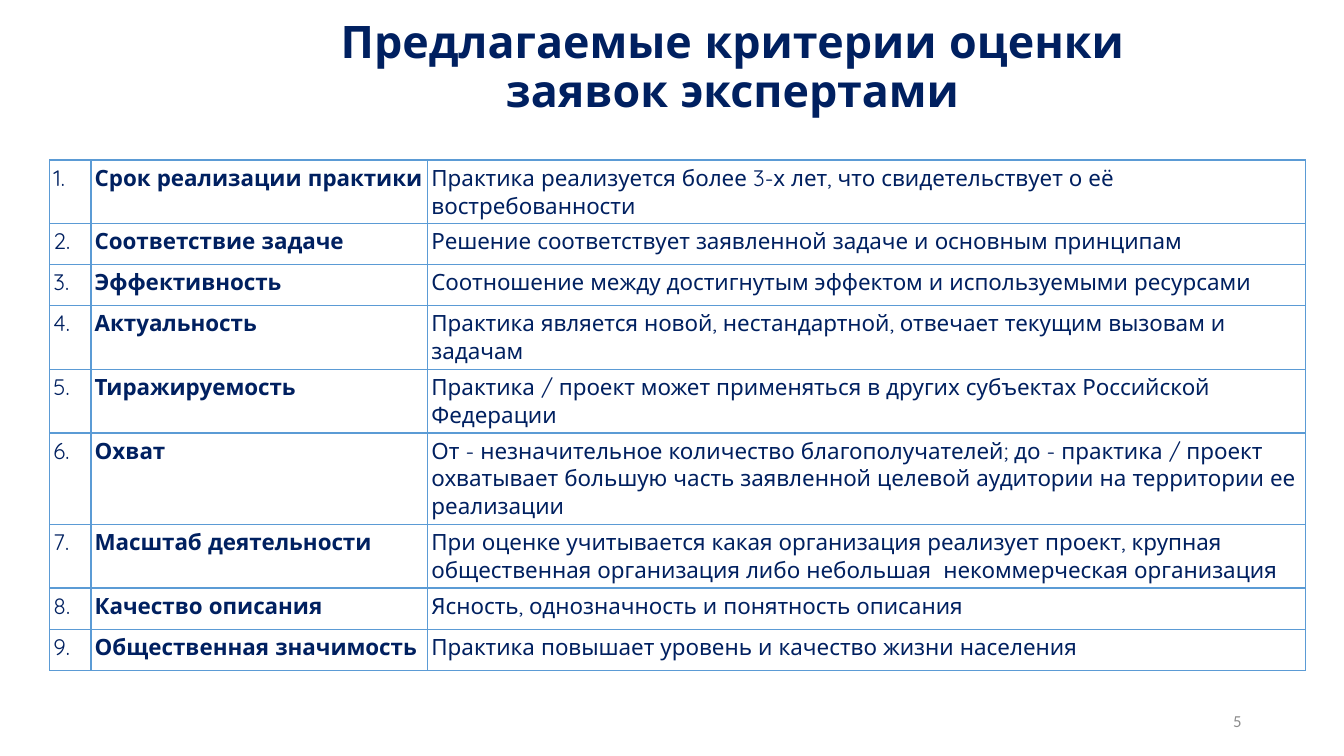
from dataclasses import dataclass
from typing import Any, NamedTuple

from lxml import etree
from pptx import Presentation
from pptx.dml.color import RGBColor
from pptx.enum.text import MSO_ANCHOR, PP_ALIGN
from pptx.oxml.ns import qn
from pptx.util import Pt

LEFT, CENTER, RIGHT = PP_ALIGN.LEFT, PP_ALIGN.CENTER, PP_ALIGN.RIGHT
MIDDLE, BOTTOM = MSO_ANCHOR.MIDDLE, MSO_ANCHOR.BOTTOM


@dataclass(frozen=True)
class Theme:
    navy: str = "002060"
    gray: str = "8C8C8C"
    blue: str = "5B9BD5"
    main: str = "Quicksand"
    plain: str = "Calibri"
    title: float = 32
    body: float = 16
    small: float = 12


class Style(NamedTuple):
    face: str
    size: float
    color: str
    bold: bool = False
    align: Any = LEFT
    spacing: float = 1.0


class Label(NamedTuple):
    text: str
    box: tuple[float, float, float, float]
    anchor: Any
    style: Style


class Rule(NamedTuple):
    name: str
    detail: str
    lines: int = 1


THEME = Theme()
BODY = Style(THEME.main, THEME.body, THEME.navy)
STRONG = BODY._replace(bold=True)
LABELS = [
    Label("Предлагаемые критерии оценки заявок экспертами", (196, 13, 654.5, 74), BOTTOM,
          Style(THEME.main, THEME.title, THEME.navy, True, CENTER, 0.9)),
    Label("5", (678, 500.5, 216, 28.8), MIDDLE,
          Style(THEME.plain, THEME.small, THEME.gray, align=RIGHT)),
]
RULES = [
    Rule("Срок реализации практики",
         "Практика реализуется более 3-х лет, что свидетельствует о её востребованности", 2),
    Rule("Соответствие задаче", "Решение соответствует заявленной задаче и основным принципам"),
    Rule("Эффективность", "Соотношение между достигнутым эффектом и используемыми ресурсами"),
    Rule("Актуальность",
         "Практика является новой, нестандартной, отвечает текущим вызовам и задачам", 2),
    Rule("Тиражируемость",
         "Практика / проект может применяться в других субъектах Российской Федерации", 2),
    Rule("Охват",
         "От - незначительное количество благополучателей; до - практика / проект охватывает "
         "большую часть заявленной целевой аудитории на территории ее реализации", 3),
    Rule("Масштаб деятельности",
         "При оценке учитывается какая организация реализует проект, крупная общественная "
         "организация либо небольшая  некоммерческая организация", 2),
    Rule("Качество описания", "Ясность, однозначность и понятность описания"),
    Rule("Общественная значимость", "Практика повышает уровень и качество жизни населения"),
]
WIDTHS = [29.5, 240.5, 627]
LEAST, LINE, PAD = 29.4, 20, 5.4
INSET = Pt(2.7)
CELL = {"margin_left": INSET, "margin_right": INSET, "margin_top": INSET, "margin_bottom": INSET}


def apply(target: Any, values: dict[str, Any]) -> None:
    for name, value in values.items():
        setattr(target, name, value)


def write(frame: Any, text: str, style: Style) -> None:
    para = frame.paragraphs[0]
    apply(para, {"alignment": style.align, "line_spacing": style.spacing})
    run = para.add_run()
    run.text = text
    apply(run.font, {"name": style.face, "size": Pt(style.size), "bold": style.bold})
    run.font.color.rgb = RGBColor.from_string(style.color)


def border(cell: Any) -> None:
    props = cell._tc.get_or_add_tcPr()
    for side in ("L", "R", "T", "B"):
        line = etree.SubElement(props, qn(f"a:ln{side}"), w=str(Pt(1)))
        fill = etree.SubElement(line, qn("a:solidFill"))
        etree.SubElement(fill, qn("a:srgbClr"), val=THEME.blue)


def draw_label(slide: Any, label: Label) -> None:
    frame = slide.shapes.add_textbox(*map(Pt, label.box)).text_frame
    apply(frame, {"word_wrap": True, "vertical_anchor": label.anchor})
    write(frame, label.text, label.style)


def draw_table(slide: Any, rules: list[Rule]) -> None:
    heights = [max(LEAST, PAD + LINE * rule.lines) for rule in rules]
    table = slide.shapes.add_table(
        len(rules), len(WIDTHS), Pt(35.5), Pt(114.3), Pt(sum(WIDTHS)), Pt(sum(heights))).table
    apply(table, {"first_row": False, "horz_banding": False})
    for column, width in zip(table.columns, WIDTHS):
        column.width = Pt(width)
    for index, (row, rule, height) in enumerate(zip(table.rows, rules, heights), 1):
        row.height = Pt(height)
        texts = (f"{index}.", rule.name, rule.detail)
        for cell, text, style in zip(row.cells, texts, (BODY, STRONG, BODY)):
            apply(cell, CELL)
            border(cell)
            cell.fill.background()
            write(cell.text_frame, text, style)


def main() -> None:
    deck = Presentation()
    apply(deck, {"slide_width": Pt(960), "slide_height": Pt(540)})
    slide = deck.slides.add_slide(deck.slide_layouts[6])
    draw_table(slide, RULES)
    for label in LABELS:
        draw_label(slide, label)
    deck.save("out.pptx")


if __name__ == "__main__":
    main()
